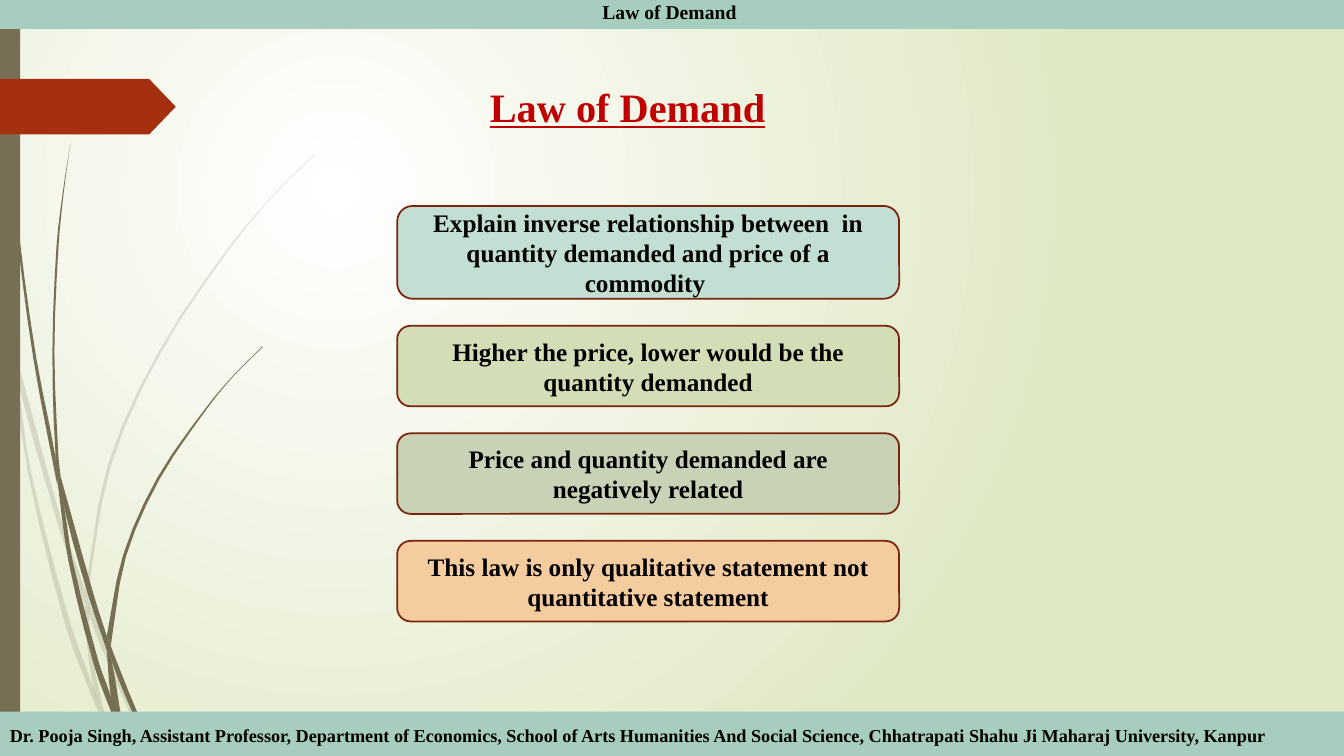
"""Builds the Law of Demand slide with four stacked statements."""
from dataclasses import dataclass
from math import dist

from lxml import etree
from pptx import Presentation
from pptx.dml.color import RGBColor
from pptx.enum.shapes import MSO_SHAPE
from pptx.enum.text import MSO_ANCHOR, MSO_AUTO_SIZE, PP_ALIGN
from pptx.oxml.ns import qn
from pptx.util import Cm, Pt

RECT, ROUNDED, ARROW = MSO_SHAPE.RECTANGLE, MSO_SHAPE.ROUNDED_RECTANGLE, MSO_SHAPE.PENTAGON
TOP, MIDDLE = MSO_ANCHOR.TOP, MSO_ANCHOR.MIDDLE
LEFT, CENTER = PP_ALIGN.LEFT, PP_ALIGN.CENTER
NO_FIT = MSO_AUTO_SIZE.NONE
BLACK = RGBColor(0x00, 0x00, 0x00)
WHITE = RGBColor(0xFF, 0xFF, 0xFF)
PALE_GREEN = RGBColor(0xDF, 0xE8, 0xC4)
OLIVE = RGBColor(0x76, 0x6F, 0x54)
RUST = RGBColor(0xA5, 0x30, 0x10)
BROWN = RGBColor(0x7A, 0x24, 0x0C)
RED = RGBColor(0xC0, 0x00, 0x00)
TEAL = RGBColor(0xA6, 0xCD, 0xBD)
FONT = "Times New Roman"
SLIDE_W, SLIDE_H = Cm(33.87), Cm(19.05)
GRID = Cm(2.54) / 100
STEPS = 3

Points = list[tuple[float, float]]


@dataclass
class Blade:
    """A piece of grass, given by its two edges from tip to root."""
    left: Points
    right: Points


@dataclass
class Statement:
    """A rounded box with its text."""
    text: str
    fill: RGBColor
    height: float = 2.03


PALE_BLADES = [
    Blade([(0, 299), (10, 344), (11, 350)], [(0, 282), (9, 322), (11, 350)]),
    Blade([(14, 345), (17, 376), (58, 522), (84, 599)], [(14, 345), (62, 520), (85, 586)]),
    Blade([(88, 596), (88, 610), (123, 694), (150, 751)],
          [(88, 596), (92, 607), (127, 692), (155, 751)]),
    Blade([(105, 711), (119, 751)], [(105, 711), (124, 751)]),
    Blade([(11, 350), (28, 470), (65, 621), (92, 693), (101, 714)],
          [(11, 350), (17, 376), (31, 469), (70, 619), (93, 683), (99, 707), (101, 714)]),
    Blade([(84, 599), (87, 646), (93, 683), (96, 692), (105, 711)],
          [(84, 599), (88, 610), (91, 646), (103, 706), (105, 711)]),
    Blade([(312, 153), (289, 175), (268, 197), (228, 244), (158, 348), (107, 461),
           (85, 584), (85, 586)],
          [(312, 154), (290, 175), (268, 198), (229, 245), (160, 349), (110, 462),
           (88, 584), (88, 596)]),
    Blade([(101, 714), (114, 751)], [(101, 714), (119, 751)]),
    Blade([(85, 586), (84, 599)], [(88, 596), (88, 610)]),
    Blade([(93, 683), (99, 707), (101, 714), (119, 751)],
          [(93, 683), (96, 692), (105, 711), (119, 751)]),
]

DARK_BLADES = [
    Blade([(3, 0), (4, 48), (7, 110), (17, 233), (33, 355), (56, 477), (57, 481)],
          [(4, 0), (5, 48), (8, 109), (19, 232), (36, 355), (55, 453), (57, 481)]),
    Blade([(60, 472), (64, 505), (88, 592), (106, 645)], [(60, 472), (93, 590), (106, 631)]),
    Blade([(110, 641), (111, 656), (132, 708), (152, 749)],
          [(110, 641), (113, 649), (136, 706), (157, 749)]),
    Blade([(57, 477), (68, 557), (93, 659), (111, 708), (117, 722)],
          [(57, 477), (64, 505), (72, 556), (98, 657), (110, 691), (117, 722)]),
    Blade([(70, 141), (62, 193), (56, 245), (52, 349), (55, 449), (60, 472)],
          [(70, 141), (63, 193), (58, 245), (54, 349), (58, 453), (60, 472)]),
    Blade([(55, 449), (55, 453), (57, 477), (64, 505)], [(55, 449), (60, 472), (64, 505)]),
    Blade([(260, 344), (231, 373), (204, 405), (156, 474), (122, 551), (106, 631)],
          [(261, 344), (231, 374), (205, 406), (158, 476), (125, 552), (111, 633), (110, 641)]),
    Blade([(106, 645), (110, 691), (116, 706), (122, 719)],
          [(106, 645), (111, 656), (121, 716), (122, 719)]),
    Blade([(106, 631), (106, 645)], [(110, 641), (111, 656)]),
    Blade([(110, 691), (117, 722), (130, 749)], [(110, 691), (122, 719), (133, 749)]),
]

STATEMENTS = [
    Statement("Explain inverse relationship between  in quantity demanded and price of a commodity ",
              RGBColor(0xC3, 0xDE, 0xD3), 2.34),
    Statement("Higher the price, lower would be the quantity demanded",
              RGBColor(0xD4, 0xDE, 0xB6)),
    Statement("Price and quantity demanded are negatively related",
              RGBColor(0xC7, 0xD2, 0xB7)),
    Statement("This law is only qualitative statement not quantitative statement",
              RGBColor(0xF5, 0xCB, 0xA0)),
]


def smooth(points: Points) -> Points:
    """Return points along a smooth curve through the given ones."""
    if len(points) == 2:
        return points
    ends = [points[0], *points, points[-1]]
    curve = []
    for a, b, c, d in zip(ends, ends[1:], ends[2:], ends[3:]):
        length = dist(b, c)
        m, n = length / (dist(a, b) + length), length / (length + dist(c, d))
        for step in range(STEPS):
            t = step / STEPS
            curve.append(tuple(
                b[i] * (2 * t ** 3 - 3 * t ** 2 + 1) + c[i] * (3 * t ** 2 - 2 * t ** 3)
                + m * (c[i] - a[i]) * (t ** 3 - 2 * t ** 2 + t)
                + n * (d[i] - b[i]) * (t ** 3 - t ** 2)
                for i in (0, 1)))
    return curve + [points[-1]]


def paint(sp, color: RGBColor) -> None:
    """Give a shape a plain fill without line or shadow."""
    sp.shadow.inherit = False
    sp.fill.solid()
    sp.fill.fore_color.rgb = color
    sp.line.fill.background()


def add_blades(s, blades: list[Blade], opacity: int) -> None:
    """Draw a tuft of grass."""
    for blade in blades:
        outline = [(x * GRID, y * GRID) for x, y in
                   dict.fromkeys(smooth(blade.left) + smooth(blade.right)[::-1])]
        builder = s.shapes.build_freeform(*outline[0])
        builder.add_line_segments(outline[1:], close=True)
        sp = builder.convert_to_shape()
        paint(sp, OLIVE)
        if opacity < 100:
            color = sp.fill._xPr.find(qn("a:solidFill"))[0]
            etree.SubElement(color, qn("a:alpha"), val=str(opacity * 1000))


def add_block(s, kind, left: int, top: int, width: int, height: int, color: RGBColor):
    """Draw a plain preset shape."""
    sp = s.shapes.add_shape(kind, left, top, width, height)
    paint(sp, color)
    return sp


def write(sp, text: str, size: float, color: RGBColor = BLACK, align=CENTER,
          anchor=MIDDLE, underline: bool = False) -> None:
    """Write one bold run into a shape."""
    tf = sp.text_frame
    tf.word_wrap, tf.auto_size, tf.vertical_anchor = True, NO_FIT, anchor
    p = tf.paragraphs[0]
    p.alignment = align
    r = p.add_run()
    r.text = text
    r.font.name, r.font.size = FONT, Pt(size)
    r.font.bold, r.font.underline = True, underline
    r.font.color.rgb = color


def set_background(s) -> None:
    """Fill the background with a circular gradient."""
    fill = s.background.fill
    fill.gradient()
    for stop, color in zip(fill.gradient_stops, (WHITE, PALE_GREEN)):
        stop.color.rgb = color
    grad = s.background._cSld.find(".//" + qn("a:gradFill"))
    circle = etree.Element(qn("a:path"), path="circle")
    etree.SubElement(circle, qn("a:fillToRect"), l="50000", t="50000", r="100000", b="100000")
    grad.replace(grad.find(qn("a:lin")), circle)


def main() -> None:
    """Build and save the slide."""
    prs = Presentation()
    prs.slide_width, prs.slide_height = SLIDE_W, SLIDE_H
    s = prs.slides.add_slide(prs.slide_layouts[5])
    set_background(s)
    add_blades(s, PALE_BLADES, 20)
    add_blades(s, DARK_BLADES, 100)
    add_block(s, RECT, 0, 0, Cm(0.51), SLIDE_H, OLIVE)
    arrow = add_block(s, ARROW, 0, Cm(1.99), Cm(4.43), Cm(1.4), RUST)
    arrow.adjustments[0] = 0.48
    title = s.shapes.title
    title.left, title.top, title.width, title.height = Cm(12.09), Cm(1.94), Cm(8.48), Cm(1.5)
    write(title, "Law of Demand", 28.8, RED, LEFT, underline=True)
    footer = add_block(s, RECT, 0, Cm(17.93), SLIDE_W, Cm(1.17), TEAL)
    write(footer, "Dr. Pooja Singh, Assistant Professor, Department of Economics, "
          "School of Arts Humanities And Social Science, "
          "Chhatrapati Shahu Ji Maharaj University, Kanpur", 13, align=LEFT)
    top = 5.19
    for item in STATEMENTS:
        box = add_block(s, ROUNDED, Cm(10.01), Cm(top), Cm(12.65), Cm(item.height), item.fill)
        box.line.color.rgb, box.line.width = BROWN, Pt(1.25)
        write(box, item.text, 18)
        top += item.height + 0.68
    header = add_block(s, RECT, 0, Cm(-0.13), SLIDE_W, Cm(0.86), TEAL)
    write(header, "Law of Demand ", 14, anchor=TOP)
    prs.save("out.pptx")


if __name__ == "__main__":
    main()
